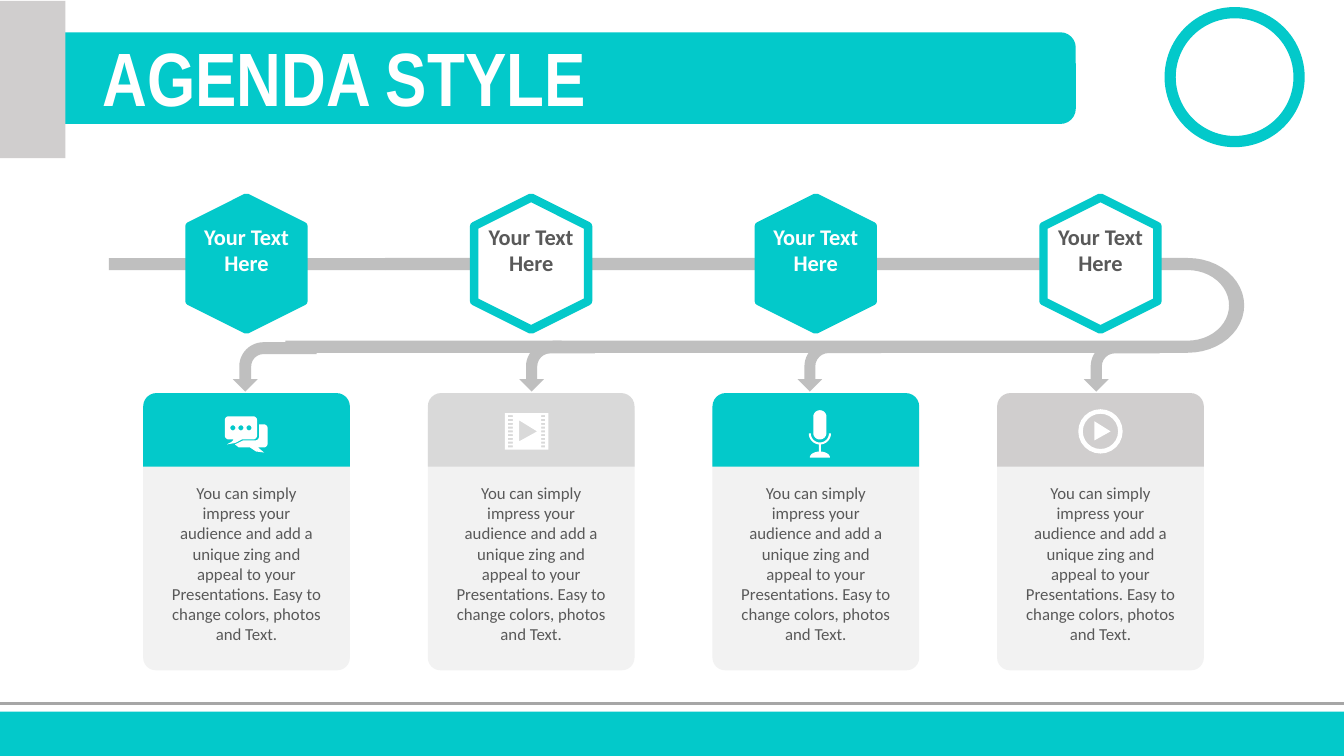
"""Build an agenda slide with four hexagon steps, a bent pipe and four cards."""
from dataclasses import dataclass
from math import cos, radians, sin

from lxml.etree import SubElement
from pptx import Presentation
from pptx.dml.color import RGBColor
from pptx.enum.shapes import MSO_CONNECTOR, MSO_SHAPE
from pptx.enum.text import MSO_ANCHOR, PP_ALIGN
from pptx.oxml.ns import qn
from pptx.util import Inches, Pt

Point = tuple[float, float]
Contour = list[Point]

SLIDE_WIDTH, SLIDE_HEIGHT = Inches(13.33), Inches(7.5)
GRID_COLUMNS, GRID_ROWS = 1333, 750
CARD_WIDTH = 205
CARD_STEP = 282.33
FIRST_CENTER = 244.5
BODY_TEXT = ("You can simply impress your audience and add a unique zing and appeal to "
             "your Presentations. Easy to change colors, photos and Text.")


@dataclass(frozen=True)
class Theme:
    """Hold the colours, fonts and type sizes."""
    accent: str = "03C9CA"
    white: str = "FFFFFF"
    text: str = "595959"
    card: str = "F2F2F2"
    pipe: str = "BFBFBF"
    silver: str = "D9D9D9"
    stone: str = "D0CECE"
    rule: str = "A6A6A6"
    title_font: str = "Arial Narrow"
    body_font: str = "Calibri"
    title_size: int = 54
    step_size: int = 16
    body_size: int = 12


THEME = Theme()


@dataclass(frozen=True)
class Box:
    """Describe a frame in grid columns and rows."""
    left: float
    top: float
    width: float
    height: float

    def frame(self) -> tuple[int, int, int, int]:
        """Return the frame as slide lengths."""
        return (column(self.left), row(self.top), column(self.width), row(self.height))


@dataclass(frozen=True)
class Step:
    """Describe one agenda step and its card."""
    hexagon_fill: str
    label_color: str
    header_fill: str
    arrow_length: float
    arrow_thickness: float
    icon: list[Contour]


def column(count: float) -> int:
    """Return the length of a number of grid columns."""
    return round(SLIDE_WIDTH * count / GRID_COLUMNS)


def row(count: float) -> int:
    """Return the length of a number of grid rows."""
    return round(SLIDE_HEIGHT * count / GRID_ROWS)


def centered(center: float, top: float, width: float, height: float) -> Box:
    """Return a box placed around a vertical axis."""
    return Box(center - width / 2, top, width, height)


def arc(x: float, y: float, radius_x: float, radius_y: float, start: float, end: float) -> Contour:
    """Return points along an elliptical arc, clockwise from the right."""
    angles = [radians(start + (end - start) * index / 24) for index in range(25)]
    return [(x + radius_x * cos(angle), y + radius_y * sin(angle)) for angle in angles]


def circle(x: float, y: float, radius: float) -> Contour:
    """Return a full circle."""
    return arc(x, y, radius, radius, 0, 360)


def rectangle(left: float, top: float, right: float, bottom: float) -> Contour:
    """Return the corners of a rectangle."""
    return [(left, top), (right, top), (right, bottom), (left, bottom)]


def chat_icon() -> list[Contour]:
    """Return two speech bubbles with three dots."""
    front = (arc(-17.5, 417, 4, 4, 180, 270) + arc(6.5, 417, 4, 4, 270, 360)
             + arc(6.5, 432, 4, 4, 0, 90)
             + [(-4.5, 436), (-11, 439.5), (-19.5, 441), (-15, 438.5), (-12.5, 436)]
             + arc(-17.5, 432, 4, 4, 90, 180))
    back = ([(12.5, 421)] + arc(17, 425, 4, 4, 270, 360) + arc(17, 440, 4, 4, 0, 90)
            + [(11.5, 444), (17.5, 449), (9.5, 448), (3.5, 444), (-7.5, 444),
               (-11.5, 441), (-3.5, 437)] + arc(8.5, 433, 4, 4, 90, 0))
    return [front, back] + [circle(x, 424.5, 2.5) for x in (-13.5, -5.5, 2.5)]


def film_icon() -> list[Contour]:
    """Return a film frame with perforations and a play mark."""
    holes = [rectangle(left, 412 + 3.75 * index, right, 414 + 3.75 * index)
             for index in range(9) for left, right in ((-23, -18), (10, 14))]
    return [rectangle(-26, 410, 17, 446), [(-12, 417), (-12, 438), (6, 428)]] + holes


def microphone_icon() -> list[Contour]:
    """Return a microphone on its stand."""
    stand = (arc(4, 430, 11, 11, 0, 85) + [(5, 448)] + arc(4, 454, 10, 6, -80, 0)
             + arc(4, 454, 10, 6, 180, 260) + [(3, 448)] + arc(4, 430, 11, 11, 95, 180)
             + arc(4, 430, 9, 9, 180, 0))
    capsule = arc(4, 413.5, 6.5, 6.5, 180, 360) + arc(4, 429.5, 6.5, 6.5, 0, 180)
    return [stand, capsule]


def play_icon() -> list[Contour]:
    """Return a ringed play mark."""
    return [circle(0, 428, 22), circle(0, 428, 17.5), [(-6, 418), (10, 428), (-6, 437)]]


def paint(shape, fill: str, line: str | None = None, line_width: float = 0) -> None:
    """Set the fill and outline of a shape without a shadow."""
    shape.shadow.inherit = False
    shape.fill.solid()
    shape.fill.fore_color.rgb = RGBColor.from_string(fill)
    if line is None:
        shape.line.fill.background()
    else:
        shape.line.color.rgb = RGBColor.from_string(line)
        shape.line.width = Pt(line_width)


def add_preset(slide, kind: MSO_SHAPE, box: Box, fill: str, adjustments: tuple = (),
               rotation: float = 0, line: str | None = None, line_width: float = 0):
    """Add a painted preset shape."""
    shape = slide.shapes.add_shape(kind, *box.frame())
    for index, value in enumerate(adjustments):
        shape.adjustments[index] = value
    shape.rotation = rotation
    paint(shape, fill, line, line_width)
    return shape


def add_outline(slide, contours: list[Contour], fill: str, center: float = 0) -> None:
    """Add a freeform whose columns are counted from a centre."""
    placed = [[(column(center + x), row(y)) for x, y in contour] for contour in contours]
    builder = slide.shapes.build_freeform(*placed[0][0])
    builder.add_line_segments(placed[0][1:], close=True)
    for contour in placed[1:]:
        builder.move_to(*contour[0])
        builder.add_line_segments(contour[1:], close=True)
    paint(builder.convert_to_shape(), fill)


def add_text(slide, text: str, box: Box, *, size: int, color: str, font: str = THEME.body_font,
             bold: bool = False, align: PP_ALIGN = PP_ALIGN.CENTER,
             anchor: MSO_ANCHOR = MSO_ANCHOR.TOP) -> None:
    """Add a wrapped text box."""
    frame = slide.shapes.add_textbox(*box.frame()).text_frame
    frame.word_wrap = True
    frame.vertical_anchor = anchor
    paragraph = frame.paragraphs[0]
    paragraph.alignment = align
    run = paragraph.add_run()
    run.text = text
    run.font.size, run.font.bold, run.font.name = Pt(size), bold, font
    run.font.color.rgb = RGBColor.from_string(color)


def add_backdrop(slide) -> None:
    """Draw the title bar, side tab, badge and footer."""
    add_preset(slide, MSO_SHAPE.ROUNDED_RECTANGLE, Box(40, 32, 1027, 91), THEME.accent)
    rule = slide.shapes.add_connector(MSO_CONNECTOR.STRAIGHT, 0, row(698), SLIDE_WIDTH, row(698))
    rule.line.color.rgb = RGBColor.from_string(THEME.rule)
    rule.line.width = Pt(2)
    SubElement(rule._element.spPr, qn("a:effectLst"))
    add_preset(slide, MSO_SHAPE.RECTANGLE, Box(0, 706, GRID_COLUMNS, 44), THEME.accent)
    add_preset(slide, MSO_SHAPE.RECTANGLE, Box(0, 1, 65, 156), THEME.stone)
    add_preset(slide, MSO_SHAPE.DONUT, Box(1155, 7, 139, 139), THEME.accent, (0.08,))
    add_text(slide, "AGENDA STYLE", Box(92, 25, 624, 101), size=THEME.title_size,
             color=THEME.white, font=THEME.title_font, bold=True, align=PP_ALIGN.LEFT,
             anchor=MSO_ANCHOR.MIDDLE)


def add_pipe(slide, steps: list[Step]) -> None:
    """Draw the pipe with its turn and the arrows to the cards."""
    for left, top in ((108, 256), (283, 338)):
        add_preset(slide, MSO_SHAPE.RECTANGLE, Box(left, top, 274, 12), THEME.pipe)
    turn = ([(382, 256)] + arc(1178, 303, 56, 47, -90, 90) + [(548, 350), (548, 338)]
            + arc(1178, 303, 41, 35, 90, -90) + [(382, 268)])
    add_outline(slide, [turn], THEME.pipe)
    for index, step in enumerate(steps):
        box = centered(272.5 + 280 * index, 364 - step.arrow_length / 2, 49, step.arrow_length)
        arrow = add_preset(slide, MSO_SHAPE.BENT_ARROW, box, THEME.pipe,
                           (step.arrow_thickness, 0.25, 0.25, 0.489), rotation=270)
        arrow._element.spPr.xfrm.set("flipH", "1")


def add_step(slide, step: Step, center: float) -> None:
    """Draw a hexagon and the card below it."""
    add_preset(slide, MSO_SHAPE.HEXAGON, centered(center, 205, 131, 113), step.hexagon_fill,
               rotation=270, line=THEME.accent, line_width=6)
    add_preset(slide, MSO_SHAPE.ROUNDED_RECTANGLE, centered(center, 398, CARD_WIDTH, 267),
               THEME.card, (0.061,))
    add_preset(slide, MSO_SHAPE.ROUND_2_SAME_RECTANGLE, centered(center, 390, CARD_WIDTH, 73),
               step.header_fill, (0.18, 0))
    add_text(slide, "Your Text Here", centered(center, 216, 104, 91), size=THEME.step_size,
             color=step.label_color, bold=True)
    add_text(slide, BODY_TEXT, centered(center, 474, 169, 172), size=THEME.body_size,
             color=THEME.text)
    add_outline(slide, step.icon, THEME.white, center)


def main() -> None:
    """Build and save the presentation."""
    presentation = Presentation()
    presentation.slide_width, presentation.slide_height = SLIDE_WIDTH, SLIDE_HEIGHT
    slide = presentation.slides.add_slide(presentation.slide_layouts[6])
    steps = [
        Step(THEME.accent, THEME.white, THEME.accent, 83, 0.241, chat_icon()),
        Step(THEME.white, THEME.text, THEME.silver, 75, 0.227, film_icon()),
        Step(THEME.accent, THEME.white, THEME.accent, 83, 0.22, microphone_icon()),
        Step(THEME.white, THEME.text, THEME.stone, 75, 0.226, play_icon()),
    ]
    add_backdrop(slide)
    add_pipe(slide, steps)
    for index, step in enumerate(steps):
        add_step(slide, step, FIRST_CENTER + CARD_STEP * index)
    presentation.save("out.pptx")


if __name__ == "__main__":
    main()
